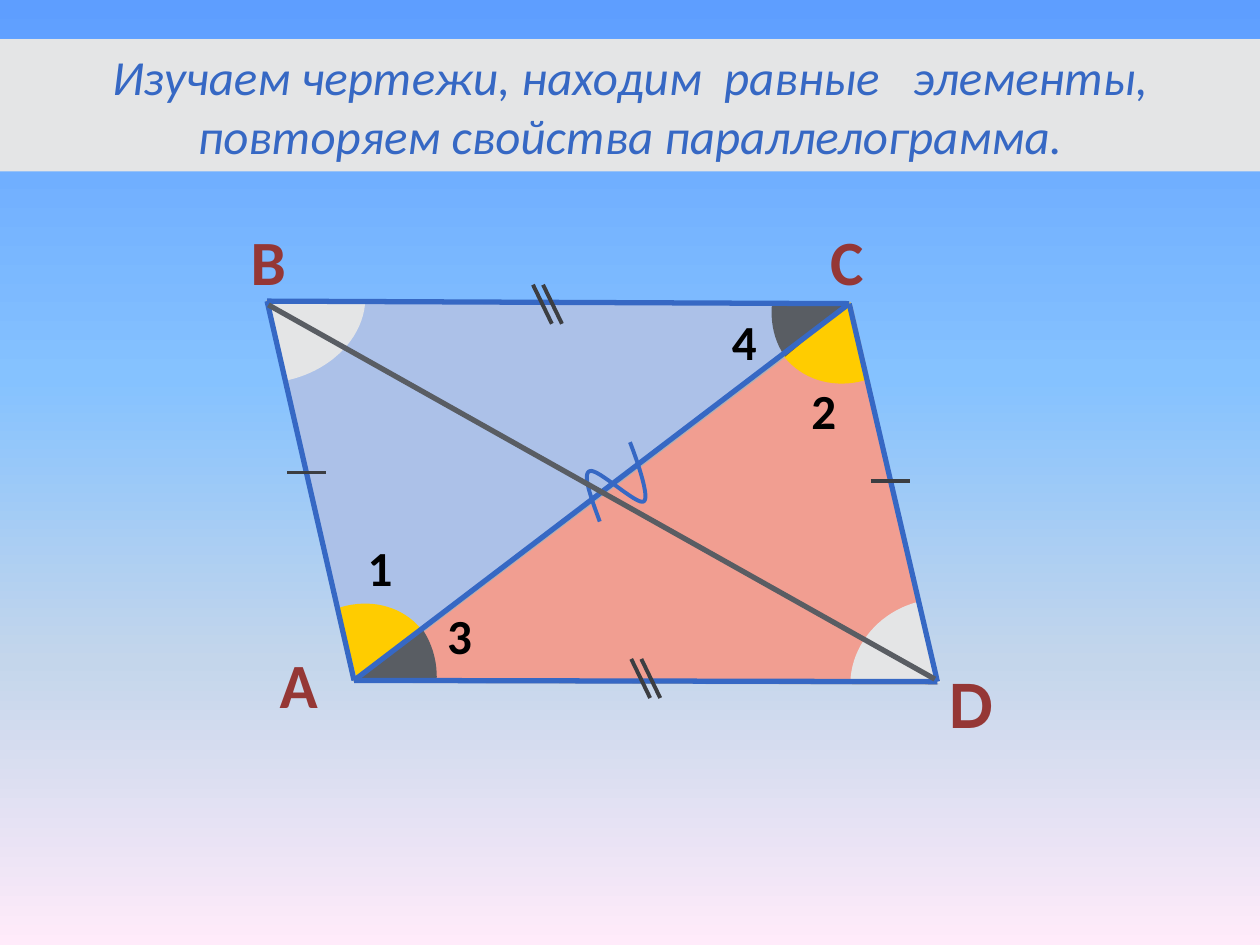
from typing import NamedTuple

import lxml.etree
import pptx
import pptx.dml.color
import pptx.enum.shapes
import pptx.enum.text
import pptx.oxml.ns
import pptx.util

Inches = pptx.util.Inches
Pt = pptx.util.Pt
Shape = pptx.enum.shapes.MSO_SHAPE
qn = pptx.oxml.ns.qn

COLORS = {
    "blue": "3668C4", "pale_blue": "ACC1E8", "salmon": "F19E91", "edge": "ADB0B5",
    "yellow": "FFCC00", "gray": "595D63", "light": "E4E5E6", "tick": "3C3E42",
    "vertex": "953735", "black": "000000",
}
SKY = [(0, "5E9EFF"), (40, "85C2FF"), (70, "C4D6EB"), (100, "FFEBFA")]
TITLE = "Изучаем чертежи, находим  равные   элементы, повторяем свойства параллелограмма."


class Figure(NamedTuple):
    kind: int
    left: float
    top: float
    width: float
    height: float
    rotation: float
    adjustments: tuple[float, ...]
    fill: str
    line: str | None = None


class Label(NamedTuple):
    text: str
    left: float
    top: float
    width: float
    height: float
    size: int
    color: str
    font: str = "Calibri"


class Segment(NamedTuple):
    start: tuple[float, float]
    end: tuple[float, float]
    color: str
    width: float


TRIANGLES = [
    Figure(Shape.ISOSCELES_TRIANGLE, 1.46, 1.38, 4.94, 2.81, 322.8, (0.257,), "pale_blue", "edge"),
    Figure(Shape.ISOSCELES_TRIANGLE, 3.17, 3.63, 4.93, 2.8, 142.8, (0.257,), "salmon", "edge"),
]
ANGLES = [
    Figure(Shape.PIE, 2.25, 4.75, 1.17, 1.3, 53.3, (121.35, 161.76), "yellow"),
    Figure(Shape.PIE, 6.14, 1.72, 1.22, 1.36, 226.8, (125.78, 165.56), "yellow"),
    Figure(Shape.PIE, 2.12, 4.74, 1.37, 1.31, 116.6, (124.14, 146.2), "gray"),
    Figure(Shape.PIE, 6.07, 1.84, 1.3, 1.16, 297.8, (121.24, 145.85), "gray"),
    Figure(Shape.PIE, 6.76, 4.77, 1.38, 1.28, 345.7, (116.87, 161.06), "light", "light"),
    Figure(Shape.PIE, 1.39, 1.81, 1.5, 1.21, 168.7, (114.51, 160.57), "light", "light"),
]
LABELS = [
    Label("А", 2.12, 5.07, 0.51, 0.71, 36, "vertex"),
    Label("В", 1.89, 1.72, 0.48, 0.71, 36, "vertex"),
    Label("С", 6.49, 1.72, 0.47, 0.71, 36, "vertex"),
    Label("D", 7.43, 5.23, 0.52, 0.71, 36, "vertex", "Cabin"),
    Label("1", 2.82, 4.22, 0.39, 0.57, 28, "black"),
    Label("2", 6.34, 2.97, 0.39, 0.57, 28, "black"),
    Label("3", 3.45, 4.76, 0.39, 0.57, 28, "black"),
    Label("4", 5.71, 2.42, 0.31, 0.57, 28, "black"),
]
A, B, C, D = (2.81, 5.4), (2.12, 2.39), (6.74, 2.41), (7.44, 5.41)
SIDES = [Segment(start, end, "blue", 3) for start, end in [(A, C), (C, D), (A, D), (B, C), (B, A)]]
SINGLE_TICKS = [
    Segment((left, top), (left + 0.31, top), "tick", 2.25)
    for left, top in [(6.91, 3.82), (2.28, 3.75)]
]
DOUBLE_TICKS = [
    Segment((left + shift, top), (left + shift + 0.15, top + 0.31), "tick", 2.25)
    for left, top in [(4.23, 2.26), (5.01, 5.23)]
    for shift in (0, 0.08)
]
DIAGONAL_BD = Segment((2.13, 2.42), (7.42, 5.39), "gray", 3)
WAVE = [
    ((4.76, 4.14), (4.69, 3.95), (4.62, 3.76), (4.68, 3.74)),
    ((4.68, 3.74), (4.74, 3.71), (5.06, 4.02), (5.11, 3.98)),
    ((5.11, 3.98), (5.17, 3.94), (5, 3.51), (5, 3.51)),
]


def rgb(name: str) -> pptx.dml.color.RGBColor:
    return pptx.dml.color.RGBColor.from_string(COLORS[name])


def paint_sky(slide) -> None:
    fill = slide.background.fill
    fill.gradient()
    fill.gradient_angle = 270
    stops = slide.element.find(".//" + qn("a:gsLst"))
    for stop in list(stops):
        stops.remove(stop)
    for percent, color in SKY:
        stop = lxml.etree.SubElement(stops, qn("a:gs"), pos=str(percent * 1000))
        lxml.etree.SubElement(stop, qn("a:srgbClr"), val=color)


def add_figure(slide, figure: Figure):
    shape = slide.shapes.add_shape(
        figure.kind, Inches(figure.left), Inches(figure.top),
        Inches(figure.width), Inches(figure.height))
    shape.shadow.inherit = False
    shape.rotation = figure.rotation
    for index, value in enumerate(figure.adjustments):
        shape.adjustments[index] = value
    shape.fill.solid()
    shape.fill.fore_color.rgb = rgb(figure.fill)
    if figure.line:
        shape.line.color.rgb = rgb(figure.line)
        shape.line.width = Pt(2)
    else:
        shape.line.fill.background()
    return shape


def add_span(para, text: str, size: int, color: str, font: str = "Calibri"):
    span = para.add_run()
    span.text = text
    span.font.size = Pt(size)
    span.font.name = font
    span.font.color.rgb = rgb(color)
    return span


def add_label(slide, label: Label) -> None:
    box = slide.shapes.add_textbox(
        Inches(label.left), Inches(label.top), Inches(label.width), Inches(label.height))
    box.text_frame.auto_size = pptx.enum.text.MSO_AUTO_SIZE.SHAPE_TO_FIT_TEXT
    box.text_frame.word_wrap = label.color == "black"
    para = box.text_frame.paragraphs[0]
    add_span(para, label.text, label.size, label.color, label.font).font.bold = True


def add_segment(slide, segment: Segment) -> None:
    line = slide.shapes.add_connector(
        pptx.enum.shapes.MSO_CONNECTOR.STRAIGHT,
        *map(Inches, segment.start), *map(Inches, segment.end))
    line.line.color.rgb = rgb(segment.color)
    line.line.width = Pt(segment.width)
    lxml.etree.SubElement(line.element.spPr, qn("a:effectLst"))


def add_wave(slide, steps: int = 16) -> None:
    """Trace the cubic curves of the equality mark with short straight steps."""
    points = []
    for curve in WAVE:
        for step in range(1, steps + 1):
            t = step / steps
            weights = ((1 - t) ** 3, 3 * t * (1 - t) ** 2, 3 * t * t * (1 - t), t ** 3)
            points.append(tuple(
                Inches(sum(weight * point[axis] for weight, point in zip(weights, curve)))
                for axis in (0, 1)))
    builder = slide.shapes.build_freeform(*map(Inches, WAVE[0][0]))
    builder.add_line_segments(points, close=False)
    wave = builder.convert_to_shape()
    wave.shadow.inherit = False
    wave.fill.background()
    wave.line.color.rgb = rgb("blue")
    wave.line.width = Pt(2.25)


def add_title(slide) -> None:
    banner = add_figure(slide, Figure(Shape.RECTANGLE, 0, 0.31, 10, 1.05, 0, (), "light"))
    banner.text_frame.word_wrap = True
    banner.text_frame.vertical_anchor = pptx.enum.text.MSO_ANCHOR.MIDDLE
    para = banner.text_frame.paragraphs[0]
    para.alignment = pptx.enum.text.PP_ALIGN.CENTER
    add_span(para, TITLE, 28, "blue").font.italic = True


def main() -> None:
    deck = pptx.Presentation()
    deck.slide_width, deck.slide_height = Inches(10), Inches(7.5)
    slide = deck.slides.add_slide(deck.slide_layouts[6])
    paint_sky(slide)
    for figure in TRIANGLES + ANGLES:
        add_figure(slide, figure)
    add_wave(slide)
    for segment in SIDES + SINGLE_TICKS + DOUBLE_TICKS + [DIAGONAL_BD]:
        add_segment(slide, segment)
    for label in LABELS:
        add_label(slide, label)
    add_title(slide)
    deck.save("out.pptx")


if __name__ == "__main__":
    main()
